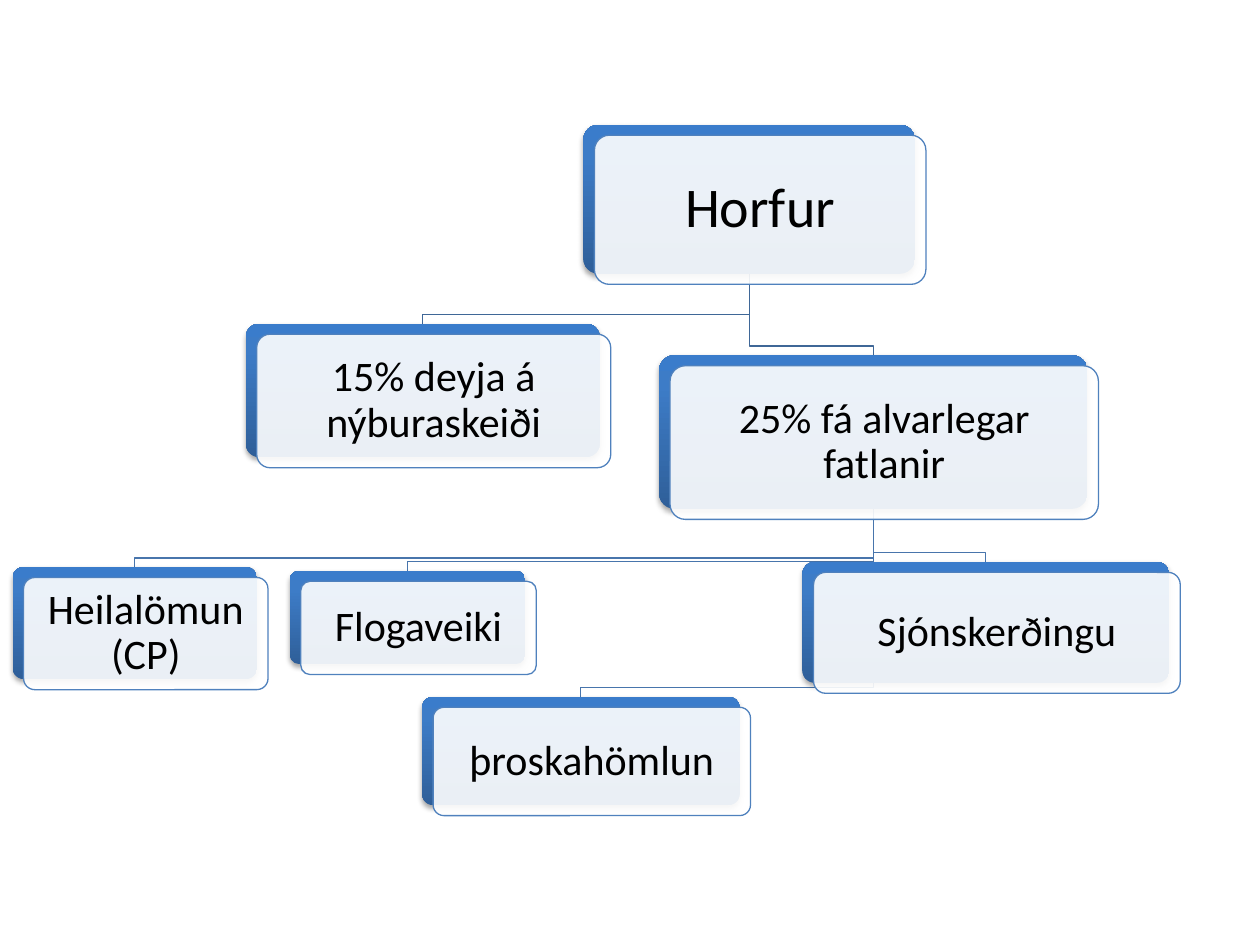
from dataclasses import dataclass
from typing import Optional

import pptx
import pptx.dml.color
import pptx.enum.shapes
import pptx.enum.text
import pptx.oxml
import pptx.oxml.ns
import pptx.util
from lxml import etree

Pt = pptx.util.Pt
qn = pptx.oxml.ns.qn
rgb = pptx.dml.color.RGBColor.from_string


@dataclass(frozen=True)
class Theme:
    font: str = "Calibri"
    root_size: float = 32
    node_size: float = 24
    text: str = "000000"
    card: str = "FFFFFF"
    card_opacity: int = 90
    card_line: str = "4F81BD"
    root_link: str = "3F6797"
    lower_link: str = "4875AC"
    line_width: float = 0.75
    corner: float = 0.1
    gradient: tuple = ((0, "2F5F99"), (80, "3D7CC7"), (100, "3A7CCB"))


@dataclass(frozen=True)
class Node:
    label: str
    left: float
    top: float
    width: float
    height: float
    parent: Optional["Node"] = None

    @property
    def center(self) -> float:
        return self.left + self.width / 2

    @property
    def bottom(self) -> float:
        return self.top + self.height


THEME = Theme()
CARD_SHIFT_X, CARD_SHIFT_Y = 6.3, 6
ELBOW_GAP = 5.2
CARD_INSET = 5

outlook = Node("Horfur", 333.4, 71.3, 189.4, 85.2)
disabled = Node("25% fá alvarlegar fatlanir", 376.6, 203, 244.8, 87.8, outlook)
palsy = Node("Heilalömun (CP)", 7.2, 324, 139.7, 64.1, disabled)
epilepsy = Node("Flogaveiki", 165.6, 326.2, 134.6, 53.3, disabled)
delay = Node("þroskahömlun", 241.2, 398.2, 181.4, 61.9, disabled)
sight = Node("Sjónskerðingu", 458.6, 321.1, 209.5, 69.1, disabled)
deaths = Node("15% deyja á nýburaskeiði", 140.4, 185, 202.3, 76.3, outlook)
NODES = (outlook, disabled, palsy, epilepsy, delay, sight, deaths)


def draw_link(shapes, child: Node) -> None:
    """Draw the elbow line from a node's parent down to the node."""
    parent = child.parent
    elbow = child.top - ELBOW_GAP
    builder = shapes.build_freeform(Pt(parent.center), Pt(parent.bottom))
    corners = ((parent.center, elbow), (child.center, elbow), (child.center, child.top))
    builder.add_line_segments([(Pt(x), Pt(y)) for x, y in corners], close=False)
    link = builder.convert_to_shape()
    link.shadow.inherit = False
    link.fill.background()
    link.line.width = Pt(THEME.line_width)
    link.line.color.rgb = rgb(THEME.lower_link if parent.parent else THEME.root_link)


def add_rounded(shapes, node: Node, shift_x: float = 0, shift_y: float = 0):
    box = shapes.add_shape(
        pptx.enum.shapes.MSO_SHAPE.ROUNDED_RECTANGLE,
        Pt(node.left + shift_x), Pt(node.top + shift_y), Pt(node.width), Pt(node.height),
    )
    box.adjustments[0] = THEME.corner
    box.shadow.inherit = False
    return box


def draw_backing(shapes, node: Node) -> None:
    """Draw the blue gradient block with its soft shadow."""
    backing = add_rounded(shapes, node)
    backing.line.fill.background()
    properties = backing.element.spPr
    gradient = etree.Element(qn("a:gradFill"), rotWithShape="1")
    stops = etree.SubElement(gradient, qn("a:gsLst"))
    for percent, color in THEME.gradient:
        stop = etree.SubElement(stops, qn("a:gs"), pos=str(percent * 1000))
        etree.SubElement(stop, qn("a:srgbClr"), val=color)
    etree.SubElement(gradient, qn("a:lin"), ang="16200000", scaled="0")
    properties.find(qn("a:prstGeom")).addnext(gradient)
    shadow = etree.SubElement(
        properties.find(qn("a:effectLst")), qn("a:outerShdw"),
        blurRad=str(Pt(3.1)), dist=str(Pt(1.8)), dir="5400000", rotWithShape="0",
    )
    black = etree.SubElement(shadow, qn("a:srgbClr"), val="000000")
    etree.SubElement(black, qn("a:alpha"), val="35000")


def draw_card(shapes, node: Node) -> None:
    """Draw the translucent front card with the node's label."""
    card = add_rounded(shapes, node, CARD_SHIFT_X, CARD_SHIFT_Y)
    card.fill.solid()
    card.fill.fore_color.rgb = rgb(THEME.card)
    color = card.element.spPr.find(qn("a:solidFill")).find(qn("a:srgbClr"))
    etree.SubElement(color, qn("a:alpha"), val=str(THEME.card_opacity * 1000))
    card.line.color.rgb = rgb(THEME.card_line)
    card.line.width = Pt(THEME.line_width)

    frame = card.text_frame
    frame.word_wrap = True
    frame.vertical_anchor = pptx.enum.text.MSO_ANCHOR.MIDDLE
    frame.margin_left = frame.margin_right = Pt(CARD_INSET)
    frame.margin_top = frame.margin_bottom = Pt(CARD_INSET)
    label = frame.paragraphs[0]
    label.text = node.label
    label.alignment = pptx.enum.text.PP_ALIGN.CENTER
    label.line_spacing = 0.9
    label.font.name = THEME.font
    label.font.size = Pt(THEME.node_size if node.parent else THEME.root_size)
    label.font.color.rgb = rgb(THEME.text)


def main() -> None:
    deck = pptx.Presentation()
    deck.slide_width, deck.slide_height = Pt(720), Pt(540)
    shapes = deck.slides.add_slide(deck.slide_layouts[6]).shapes
    for node in NODES:
        if node.parent:
            draw_link(shapes, node)
    for node in NODES:
        draw_backing(shapes, node)
        draw_card(shapes, node)
    deck.save("out.pptx")


if __name__ == "__main__":
    main()
